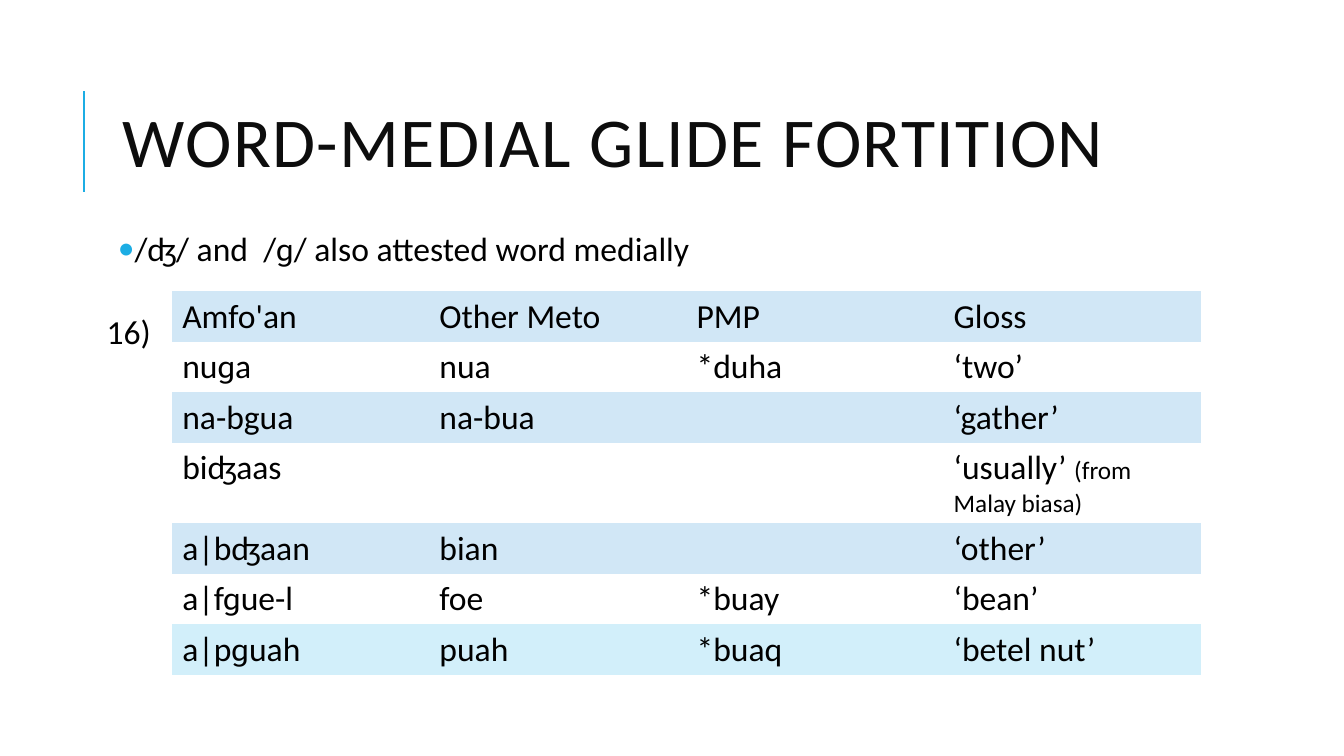
from pptx import Presentation
from pptx.dml.color import RGBColor
from pptx.enum.shapes import MSO_CONNECTOR
from pptx.enum.text import MSO_ANCHOR
from pptx.oxml.ns import qn
from pptx.util import Cm, Pt
from lxml.etree import SubElement

FONT = "Calibri"
BLACK = RGBColor(0x00, 0x00, 0x00)
INK = RGBColor(0x0D, 0x0D, 0x0D)
ACCENT = RGBColor(0x1C, 0xAD, 0xE4)
WHITE = RGBColor(0xFF, 0xFF, 0xFF)
BAND = RGBColor(0xD1, 0xE7, 0xF6)
LAST_BAND = RGBColor(0xD2, 0xEF, 0xFA)
NO_STYLE = "{2D5ABB26-0587-4C30-8999-92F81FD0307C}"

TITLE = "WORD-MEDIAL GLIDE FORTITION"
POINT = "/ʤ/ and  /ɡ/ also attested word medially"
EXAMPLE_NUMBER = "16)"
NOTES = {"‘usually’ ": "(from Malay biasa)"}
WORDS = [
    ("Amfo'an", "Other Meto", "PMP", "Gloss"),
    ("nuɡa", "nua", "*duha", "‘two’"),
    ("na-bgua", "na-bua", "", "‘gather’"),
    ("biʤaas", "", "", "‘usually’ "),
    ("a|bʤaan", "bian", "", "‘other’"),
    ("a|fɡue-l", "foe", "*buay", "‘bean’"),
    ("a|pɡuah", "puah", "*buaq", "‘betel nut’"),
]
COL_W, ROW_H = Cm(6.48), Cm(1.03)


def add_run(p, text, size=24, color=BLACK):
    r = p.add_run()
    r.text = text
    r.font.name = FONT
    r.font.size = Pt(size)
    r.font.color.rgb = color
    return r


def add_box(s, left, top, width, height):
    tf = s.shapes.add_textbox(Cm(left), Cm(top), Cm(width), Cm(height)).text_frame
    tf.word_wrap = True
    return tf


def add_bullet(p):
    """Give the paragraph a hanging accent-coloured dot."""
    pPr = p._p.get_or_add_pPr()
    pPr.set("marL", str(Cm(0.25)))
    pPr.set("indent", str(-Cm(0.25)))
    color = SubElement(pPr, qn("a:buClr"))
    SubElement(color, qn("a:srgbClr")).set("val", str(ACCENT))
    SubElement(pPr, qn("a:buFont")).set("typeface", FONT)
    SubElement(pPr, qn("a:buChar")).set("char", "•")


def add_words(s):
    rows, cols = len(WORDS), len(WORDS[0])
    frame = s.shapes.add_table(rows, cols, Cm(4.34), Cm(7.34), COL_W * cols, ROW_H * rows)
    table = frame.table
    table.first_row = table.horz_banding = False
    table._tbl.tblPr.find(qn("a:tableStyleId")).text = NO_STYLE
    for i, words in enumerate(WORDS):
        fill = LAST_BAND if i == rows - 1 else WHITE if i % 2 else BAND
        for j, word in enumerate(words):
            cell = table.cell(i, j)
            cell.fill.solid()
            cell.fill.fore_color.rgb = fill
            p = cell.text_frame.paragraphs[0]
            if word:
                add_run(p, word)
            if word in NOTES:
                add_run(p, NOTES[word], 18)


def main():
    prs = Presentation()
    prs.slide_width, prs.slide_height = Cm(33.87), Cm(19.05)
    s = prs.slides.add_slide(prs.slide_layouts[6])

    rule = s.shapes.add_connector(MSO_CONNECTOR.STRAIGHT, Cm(2.12), Cm(4.83), Cm(2.12), Cm(2.29))
    rule.line.color.rgb = ACCENT
    rule.line.width = Pt(1.5)
    SubElement(rule._element.spPr, qn("a:effectLst"))

    tf = add_box(s, 2.84, 1.63, 27, 4.17)
    tf.vertical_anchor = MSO_ANCHOR.MIDDLE
    p = tf.paragraphs[0]
    p.line_spacing = 0.8
    r = add_run(p, TITLE, 50, INK)
    r.font._element.set("spc", "100")

    add_words(s)

    tf = add_box(s, 2.44, 7.72, 1.83, 1.28)
    add_run(tf.paragraphs[0], EXAMPLE_NUMBER)

    tf = add_box(s, 2.84, 5.72, 27, 1.4)
    tf.margin_left = tf.margin_right = tf.margin_top = tf.margin_bottom = Cm(0.13)
    p = tf.paragraphs[0]
    add_bullet(p)
    p.line_spacing = 0.9
    p.space_after = Pt(2)
    add_run(p, POINT)

    prs.save("out.pptx")


if __name__ == "__main__":
    main()
